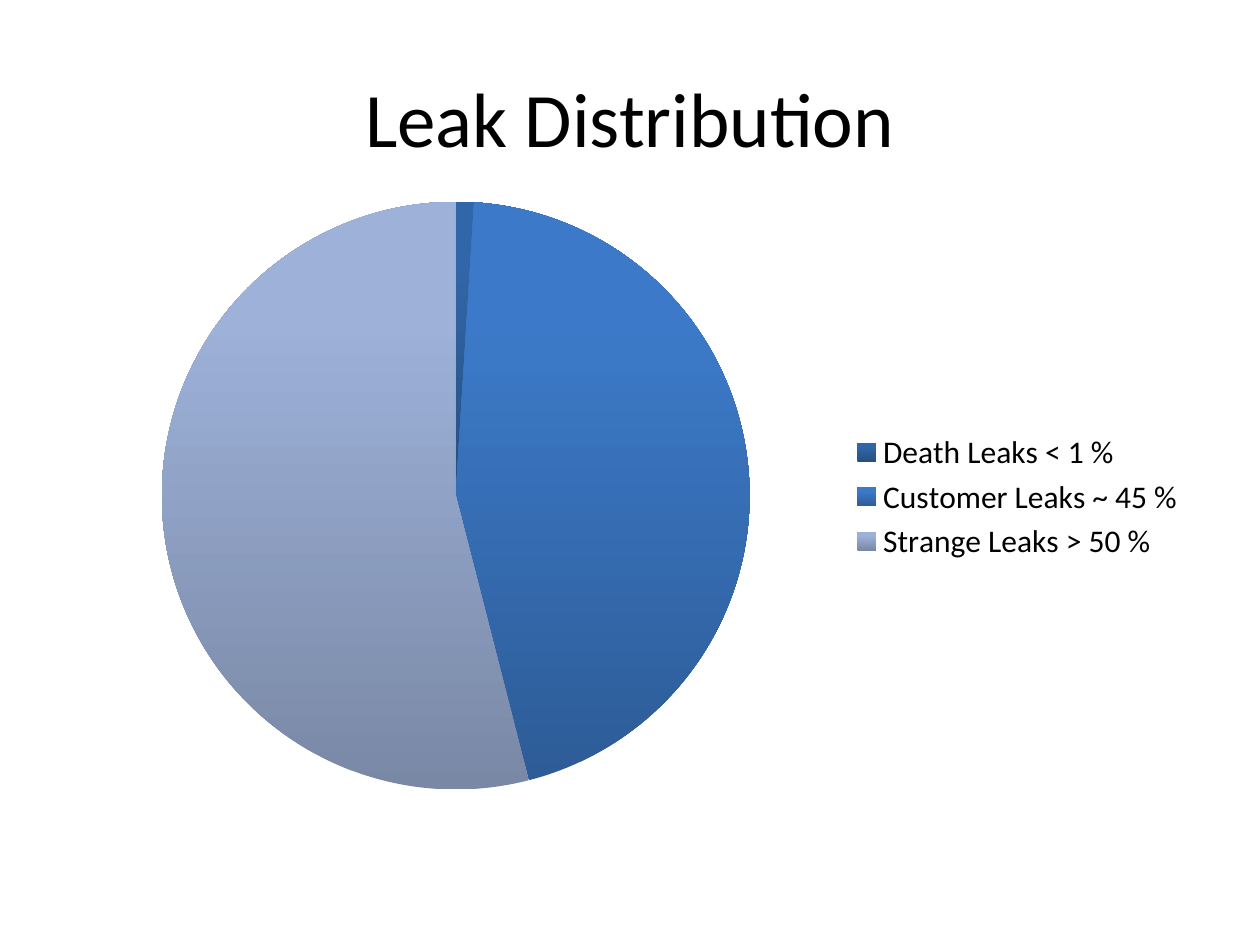
from pptx import Presentation
from pptx.chart.data import CategoryChartData
from pptx.dml.color import RGBColor
from pptx.enum.chart import XL_CHART_TYPE as ChartType, XL_LEGEND_POSITION as LegendPosition
from pptx.enum.text import MSO_ANCHOR as Anchor, PP_ALIGN as Align
from pptx.oxml import parse_xml
from pptx.oxml.ns import nsdecls
from pptx.util import Pt

# Content
TITLE = "Leak Distribution"
SERIES = "Series 1"
LEAKS = [  # label, share, colour
    ("Death Leaks < 1 %", 1, "death"),
    ("Customer Leaks ~ 45 %", 45, "customer"),
    ("Strange Leaks > 50 %", 54, "strange"),
]

# Style: each slice runs from its bottom colour to its top colour
COLORS = {
    "text": "000000",
    "death": ("264F80", "3167A8"),
    "customer": ("2D5C97", "3C7AC9"),
    "strange": ("7988A5", "9DB1D9"),
}
FONT = "Calibri"
PX = 914400 // 126

# Places in px: left, top, width, height
SLIDE_SIZE = (1260, 945)
TITLE_BOX = (63, 38, 1134, 157)
CHART_BOX = (64, 185, 1134, 624)
PIE_BOX = (162, 202, 588, 588)


def place(shape, box):
    shape.left, shape.top, shape.width, shape.height = (n * PX for n in box)


def style_font(font, size):
    font.name = FONT
    font.size = Pt(size)
    font.color.rgb = RGBColor.from_string(COLORS["text"])


def fix_pie(chart):
    """Give the pie a fixed place inside the chart frame."""
    left, top, width, height = CHART_BOX
    x, y, w, h = PIE_BOX
    parts = {"x": (x - left) / width, "y": (y - top) / height,
             "w": w / width, "h": h / height}
    values = "".join(f'<c:{key} val="{part:.3f}"/>' for key, part in parts.items())
    layout = parse_xml(
        f'<c:layout {nsdecls("c")}><c:manualLayout><c:layoutTarget val="inner"/>'
        f'<c:xMode val="edge"/><c:yMode val="edge"/>{values}'
        "</c:manualLayout></c:layout>")
    plot_area = chart.plots[0]._element.getparent()
    for old in plot_area.findall(layout.tag):
        plot_area.remove(old)
    plot_area.insert(0, layout)


deck = Presentation()
deck.slide_width, deck.slide_height = (n * PX for n in SLIDE_SIZE)
page = deck.slides.add_slide(deck.slide_layouts[5])

# Title
title = page.shapes.title
place(title, TITLE_BOX)
title.text_frame.text = TITLE
title.text_frame.vertical_anchor = Anchor.MIDDLE
para = title.text_frame.paragraphs[0]
para.alignment = Align.CENTER
style_font(para.runs[0].font, 44)

# Pie chart
data = CategoryChartData()
data.categories = [label for label, share, color in LEAKS]
data.add_series(SERIES, [share for label, share, color in LEAKS])
chart = page.shapes.add_chart(
    ChartType.PIE, *(n * PX for n in CHART_BOX), data).chart
chart.has_title = False
style_font(chart.font, 18)
chart.plots[0].vary_by_categories = True
fix_pie(chart)

# Legend
chart.has_legend = True
chart.legend.position = LegendPosition.RIGHT
chart.legend.include_in_layout = False

# Slices
for index, (label, share, color) in enumerate(LEAKS):
    slice_format = chart.series[0].points[index].format
    slice_format.line.fill.background()
    fill = slice_format.fill
    fill.gradient()
    fill.gradient_angle = 90
    for stop, position, shade in zip(fill.gradient_stops, (0, 0.8), COLORS[color]):
        stop.position = position
        stop.color.rgb = RGBColor.from_string(shade)

deck.save("out.pptx")
